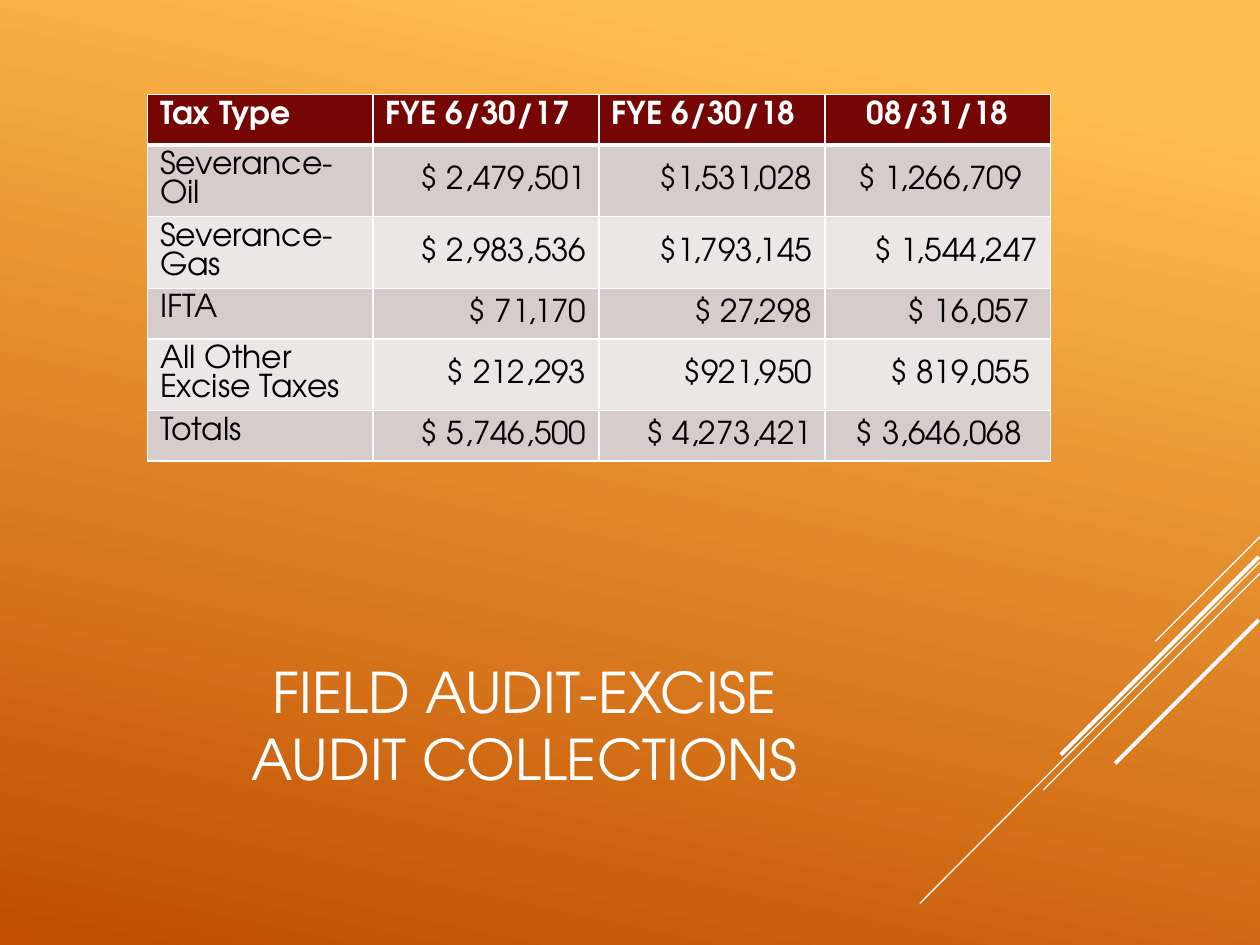
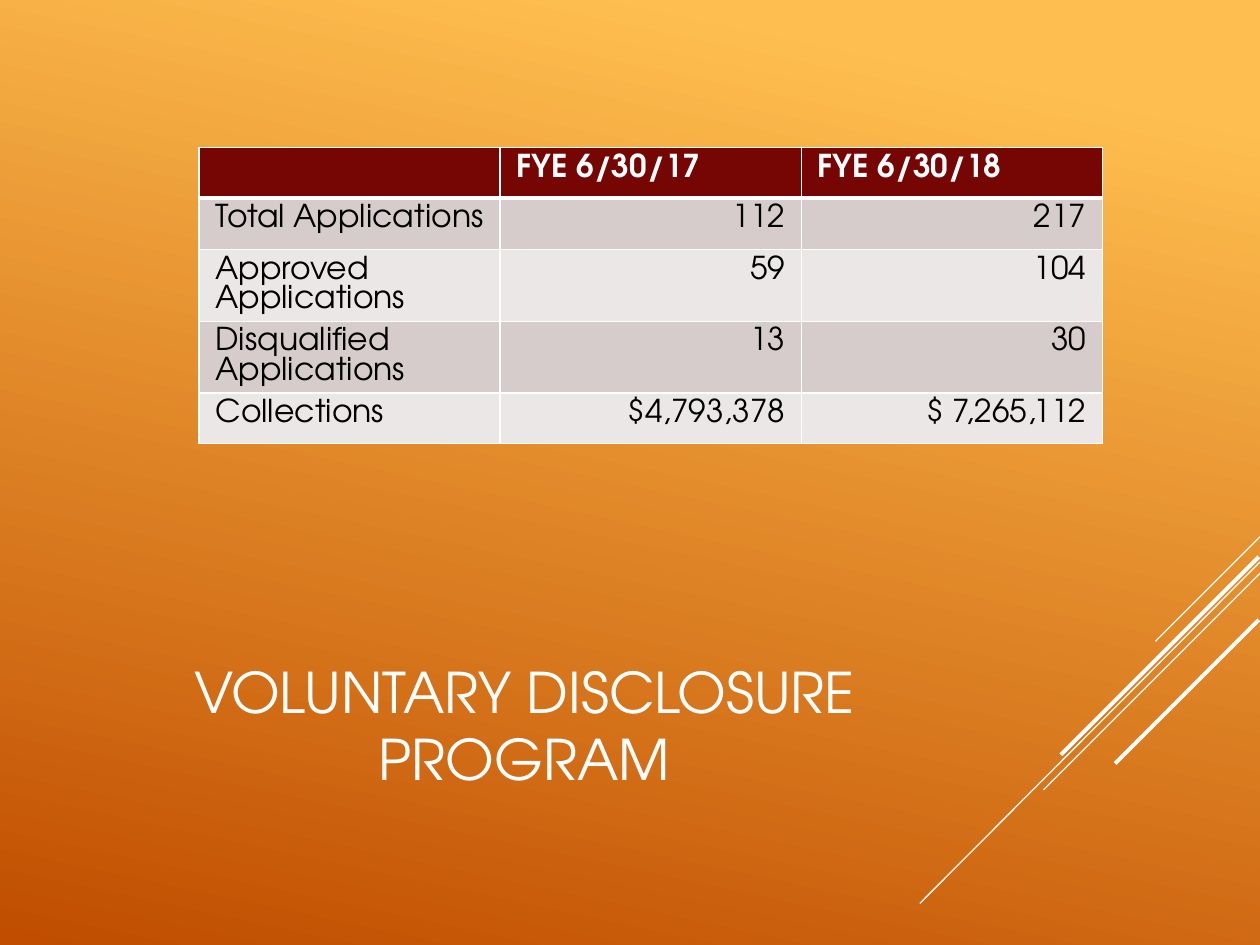
from lxml.etree import SubElement as Sub
from pptx import Presentation as Deck
from pptx.dml.color import RGBColor as Color
from pptx.enum.shapes import MSO_CONNECTOR as Link
from pptx.enum.text import MSO_ANCHOR as Anchor, PP_ALIGN as Align
from pptx.oxml.ns import qn
from pptx.util import Inches, Pt

WHITE = Color(0xFF, 0xFF, 0xFF)
BLACK = Color(0, 0, 0)
GOLD = Color(0xFF, 0xBF, 0x50)
RUST = Color(0xC0, 0x4D, 0x00)
MAROON = Color(0x76, 0x06, 0x03)
BANDS = [Color(0xD6, 0xCC, 0xCC), Color(0xEC, 0xE7, 0xE7)]
FONT = "TeX Gyre Adventor"
WIDTH = 7.17
SPACE = 0.065

RAYS = [
    (10, 4.26, 9.17, 5.09, 0.75),
    (10, 4.46, 7.3, 7.17, 0.75),
    (10, 4.55, 8.28, 6.27, 0.75),
    (9.99, 4.42, 8.42, 5.99, 2.25),
    (9.99, 4.92, 8.85, 6.06, 2.25),
]

AUDIT = [
    ["Tax Type", "FYE 6/30/17", "FYE 6/30/18", "08/31/18"],
    ["Severance-Oil", "$ 2,479,501", "$1,531,028", "$ 1,266,709"],
    ["Severance-Gas", "$ 2,983,536", "$1,793,145", "$ 1,544,247"],
    ["IFTA", "$ 71,170", "$ 27,298", "$ 16,057"],
    ["All Other Excise Taxes", "$ 212,293", "$921,950", "$ 819,055"],
    ["Totals", "$ 5,746,500", "$ 4,273,421", "$ 3,646,068"],
]

CLAIMS = [
    ["", "FYE 6/30/17", "FYE 6/30/18"],
    ["Total Applications", "112", "217"],
    ["Approved Applications", "59", "104"],
    ["Disqualified Applications", "13", "30"],
    ["Collections", "$4,793,378", "$ 7,265,112"],
]


def write(frame, text, size=18, color=BLACK, bold=False, align=Align.LEFT, lead=16.75):
    para = frame.paragraphs[0]
    para.text = text
    para.alignment = align
    para.line_spacing = Pt(lead)
    for run in para.runs:
        run.font.name = FONT
        run.font.size = Pt(size)
        run.font.bold = bold
        run.font.color.rgb = color


def paint(slide):
    fill = slide.background.fill
    fill.gradient()
    fill.gradient_angle = 360 - 102
    for stop, color, place in zip(fill.gradient_stops, (GOLD, RUST), (0.1, 1)):
        stop.color.rgb = color
        stop.position = place


def draw(slide, left, top, right, base, weight):
    ends = [Inches(n) for n in (left, top, right, base)]
    ray = slide.shapes.add_connector(Link.STRAIGHT, *ends)
    ray.line.color.rgb = WHITE
    ray.line.width = Pt(weight)
    Sub(ray._element.spPr, qn("a:effectLst"))


def title(slide, text):
    box = slide.shapes.add_textbox(Inches(0.58), Inches(4.92), Inches(WIDTH), Inches(1.67))
    frame = box.text_frame
    frame.word_wrap = True
    frame.vertical_anchor = Anchor.MIDDLE
    write(frame, text, size=32, color=WHITE, align=Align.CENTER, lead=38.3)


def edge(cell, row):
    props = cell._tc.get_or_add_tcPr()
    widths = {"L": 1, "R": 1, "T": 3 if row == 1 else 1, "B": 3 if row == 0 else 1}
    for side, width in widths.items():
        line = Sub(props, qn("a:ln" + side), w=str(Pt(width)))
        solid = Sub(line, qn("a:solidFill"))
        Sub(solid, qn("a:srgbClr"), val=str(WHITE))


def grid(slide, rows, left, top, heights, pad=0.1, anchor=Anchor.TOP):
    count = len(rows[0])
    frame = slide.shapes.add_table(len(rows), count, Inches(left), Inches(top),
                                   Inches(WIDTH), Inches(sum(heights)))
    table = frame.table
    for col in table.columns:
        col.width = Inches(WIDTH / count)
    for r, (row, height) in enumerate(zip(rows, heights)):
        table.rows[r].height = Inches(height)
        for c, text in enumerate(row):
            cell = table.cell(r, c)
            cell.margin_left = cell.margin_right = Inches(pad)
            cell.margin_top = cell.margin_bottom = Inches(0.05)
            edge(cell, r)
            cell.fill.solid()
            if r == 0:
                cell.fill.fore_color.rgb = MAROON
                write(cell.text_frame, text, color=WHITE, bold=True)
            else:
                cell.fill.fore_color.rgb = BANDS[(r - 1) % 2]
                cell.vertical_anchor = anchor if c else Anchor.TOP
                write(cell.text_frame, text, align=Align.RIGHT if c else Align.LEFT)
    return table


def page(deck, text):
    slide = deck.slides.add_slide(deck.slide_layouts[6])
    paint(slide)
    for ray in RAYS:
        draw(slide, *ray)
    title(slide, text)
    return slide


def main():
    deck = Deck()
    deck.slide_width = Inches(10)
    deck.slide_height = Inches(7.5)

    audit = page(deck, "FIELD AUDIT-EXCISE\vAUDIT COLLECTIONS")
    table = grid(audit, AUDIT, 1.17, 0.75, [0.4, 0.57, 0.57, 0.4, 0.57, 0.4],
                 anchor=Anchor.MIDDLE)
    table.cell(0, 3).text_frame.paragraphs[0].alignment = Align.CENTER
    for row, count in {1: 2, 3: 1, 4: 1, 5: 2}.items():
        table.cell(row, 3).margin_right = Inches(0.1 + count * SPACE)

    claims = page(deck, "VOLUNTARY DISCLOSURE PROGRAM")
    grid(claims, CLAIMS, 1.58, 1.17, [0.33, 0.41, 0.57, 0.57, 0.4], pad=0.13)

    deck.save("out.pptx")


if __name__ == "__main__":
    main()
